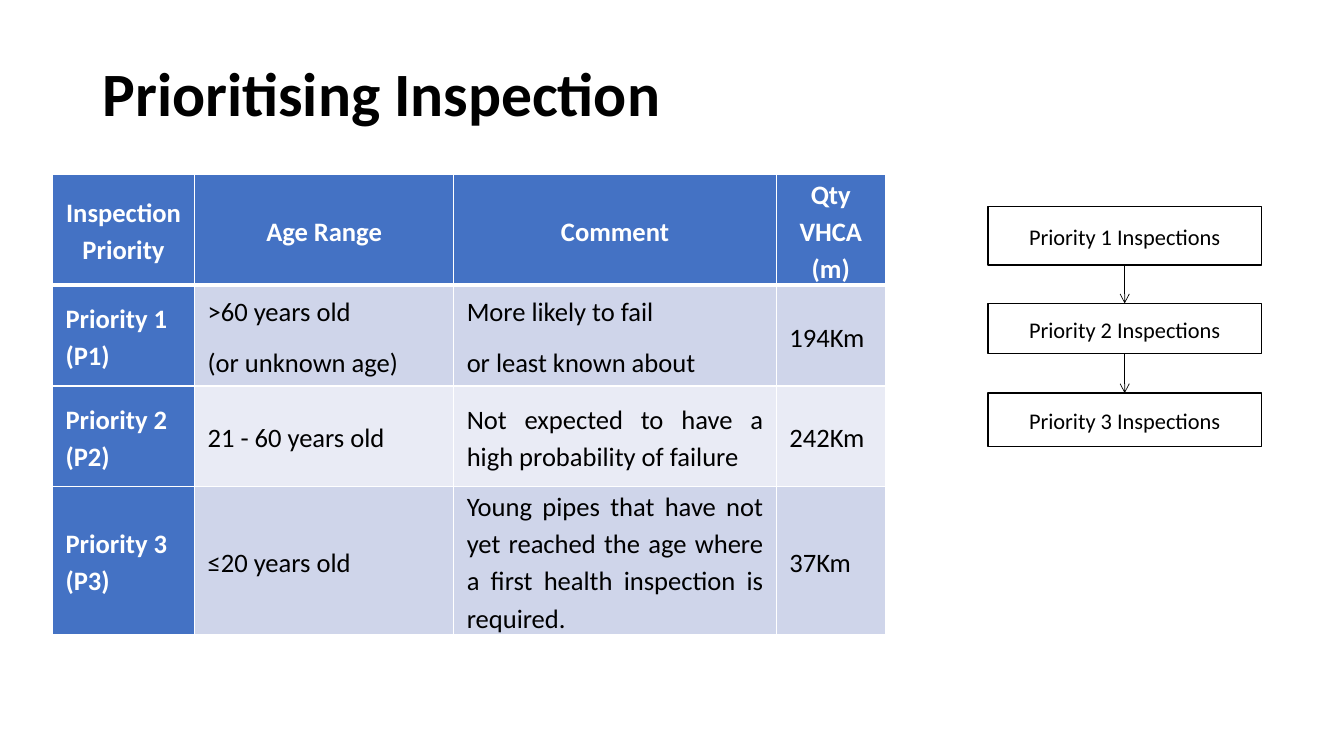
"""Build the slide on prioritising inspections: a priority table and a three-step flow."""
from itertools import pairwise

from lxml.etree import SubElement
from pptx import Presentation
from pptx.dml.color import RGBColor
from pptx.enum.shapes import MSO_CONNECTOR, MSO_SHAPE
from pptx.enum.text import MSO_ANCHOR, PP_ALIGN
from pptx.oxml.ns import qn
from pptx.util import Inches, Pt

TITLE = "Prioritising Inspection"
HEADER = ["Inspection Priority", "Age Range", "Comment", "Qty VHCA (m)"]
PRIORITIES = [
    ["Priority 1 (P1)", ">60 years old\n(or unknown age)",
     "More likely to fail\nor least known about", "194Km"],
    ["Priority 2 (P2)", "21 - 60 years old",
     "Not expected to have a high probability of failure", "242Km"],
    ["Priority 3 (P3)", "≤20 years old",
     "Young pipes that have not yet reached the age where a first health "
     "inspection is required.", "37Km"],
]
COL_WIDTHS = [1.41, 2.57, 3.2, 1.08]
ROW_HEIGHTS = [1.1, 1, 1, 1.47]
TABLE_LEFT, TABLE_TOP = 0.52, 1.73
FLOW_LEFT, FLOW_WIDTH = 9.8, 2.71
FLOW = [
    ("Priority 1 Inspections", 2.05, 0.58),
    ("Priority 2 Inspections", 3.01, 0.5),
    ("Priority 3 Inspections", 3.9, 0.53),
]
THEME = {
    "font": "Calibri",
    "black": "000000", "white": "FFFFFF", "blue": "4472C4",
    "bands": ["CFD5EA", "E9EBF5"],
    "title": 44, "table": 19, "flow": 16,
    "rule": 1, "header_rule": 3, "box_line": 1, "arrow_line": 0.5,
}


def rgb(name):
    return RGBColor.from_string(THEME.get(name, name))


def write(tf, text, size, color, bold=False, align=None, spacing=1.0, after=0):
    tf.word_wrap = True
    for i, line in enumerate(text.split("\n")):
        p = tf.paragraphs[0] if i == 0 else tf.add_paragraph()
        p.alignment, p.line_spacing, p.space_after = align, spacing, Pt(after)
        r = p.add_run()
        r.text = line
        r.font.name, r.font.size, r.font.bold = THEME["font"], Pt(THEME[size]), bold
        r.font.color.rgb = rgb(color)


def add_border(cell, side, weight):
    ln = SubElement(cell._tc.get_or_add_tcPr(), qn(f"a:ln{side}"), w=str(Pt(weight)))
    SubElement(SubElement(ln, qn("a:solidFill")), qn("a:srgbClr"), val=THEME["white"])


def fill_cell(cell, text, row, col):
    heading = row == 0 or col == 0
    heavy = {(0, "B"), (1, "T")}
    for side in "LRTB":
        add_border(cell, side, THEME["header_rule" if (row, side) in heavy else "rule"])
    cell.fill.solid()
    cell.fill.fore_color.rgb = rgb("blue" if heading else THEME["bands"][(row - 1) % 2])
    cell.margin_left = cell.margin_right = Inches(0.13)
    cell.margin_top = cell.margin_bottom = 0
    cell.vertical_anchor = MSO_ANCHOR.MIDDLE
    align = PP_ALIGN.CENTER if row == 0 else PP_ALIGN.LEFT if col == 0 else PP_ALIGN.JUSTIFY
    write(cell.text_frame, text, "table", "white" if heading else "black",
          heading, align, 1.15, 10)


def add_priority_table(s):
    rows = [HEADER, *PRIORITIES]
    table = s.shapes.add_table(
        len(rows), len(HEADER), Inches(TABLE_LEFT), Inches(TABLE_TOP),
        Inches(sum(COL_WIDTHS)), Inches(sum(ROW_HEIGHTS))).table
    for column, width in zip(table.columns, COL_WIDTHS):
        column.width = Inches(width)
    for table_row, height in zip(table.rows, ROW_HEIGHTS):
        table_row.height = Inches(height)
    for i, texts in enumerate(rows):
        for j, text in enumerate(texts):
            fill_cell(table.cell(i, j), text, i, j)


def add_step(s, text, top, height):
    sp = s.shapes.add_shape(MSO_SHAPE.RECTANGLE, Inches(FLOW_LEFT), Inches(top),
                            Inches(FLOW_WIDTH), Inches(height))
    sp.shadow.inherit = False
    sp.fill.solid()
    sp.fill.fore_color.rgb = rgb("white")
    sp.line.color.rgb = rgb("black")
    sp.line.width = Pt(THEME["box_line"])
    sp.text_frame.vertical_anchor = MSO_ANCHOR.MIDDLE
    write(sp.text_frame, text, "flow", "black", align=PP_ALIGN.CENTER, spacing=1.05, after=10)
    return sp


def add_arrow(s, upper, lower):
    arrow = s.shapes.add_connector(MSO_CONNECTOR.STRAIGHT, 0, 0, 0, 0)
    arrow.begin_connect(upper, 2)
    arrow.end_connect(lower, 0)
    arrow.line.color.rgb = rgb("black")
    arrow.line.width = Pt(THEME["arrow_line"])
    SubElement(arrow.line._get_or_add_ln(), qn("a:tailEnd"), type="arrow")
    SubElement(arrow._element.spPr, qn("a:effectLst"))


def main():
    prs = Presentation()
    prs.slide_width, prs.slide_height = Inches(13.33), Inches(7.5)
    s = prs.slides.add_slide(prs.slide_layouts[6])
    tf = s.shapes.add_textbox(Inches(0.92), Inches(0.32), Inches(11.5), Inches(1.02)).text_frame
    tf.vertical_anchor = MSO_ANCHOR.BOTTOM
    write(tf, TITLE, "title", "black", bold=True, spacing=0.9)
    add_priority_table(s)
    steps = [add_step(s, *step) for step in FLOW]
    for upper, lower in pairwise(steps):
        add_arrow(s, upper, lower)
    prs.save("out.pptx")


if __name__ == "__main__":
    main()
